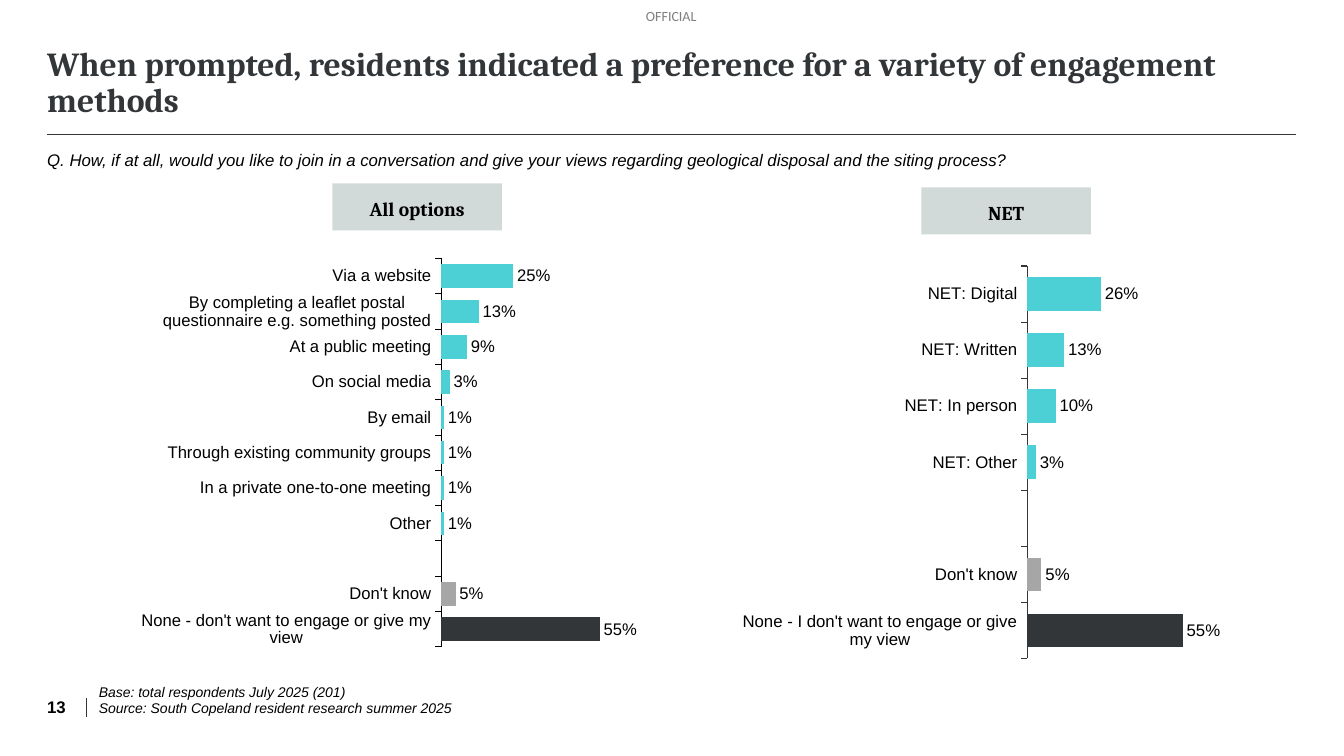
from lxml import etree
from pptx import Presentation
from pptx.chart.data import CategoryChartData
from pptx.dml.color import RGBColor
from pptx.enum.chart import XL_CHART_TYPE, XL_LABEL_POSITION, XL_TICK_MARK
from pptx.enum.shapes import MSO_CONNECTOR, MSO_SHAPE
from pptx.enum.text import MSO_ANCHOR, MSO_AUTO_SIZE, PP_ALIGN
from pptx.oxml.ns import qn
from pptx.util import Cm, Pt

TITLE = ("When prompted, residents indicated a preference for a variety "
         "of engagement methods")
QUESTION = ("Q. How, if at all, would you like to join in a conversation and give "
            "your views regarding geological disposal and the siting process?")
MARKING = "OFFICIAL"
PAGE = "13"
FOOTNOTE = ("Base: total respondents July 2025 (201)\n"
            "Source: South Copeland resident research summer 2025")

BLACK, DARK, TEAL, GREY, PALE = "000000", "323638", "4DCFD6", "A6A6A6", "D1D9D9"

ALL_OPTIONS = [
    ("Via a website", 0.25),
    ("By completing a leaflet postal questionnaire e.g. something posted", 0.13),
    ("At a public meeting", 0.09),
    ("On social media", 0.03),
    ("By email", 0.01),
    ("Through existing community groups", 0.01),
    ("In a private one-to-one meeting", 0.01),
    ("Other", 0.01),
    ("", None),
    ("Don't know", 0.05),
    ("None - don't want to engage or give my view", 0.55),
]
NET = [
    ("NET: Digital", 0.26),
    ("NET: Written", 0.13),
    ("NET: In person", 0.10),
    ("NET: Other", 0.03),
    ("", None),
    ("Don't know", 0.05),
    ("None - I don't want to engage or give my view", 0.55),
]
# heading, heading box, rows, chart box (cm), gap width, axis colour, plot area (x, y, w, h)
PANELS = [
    ("All options", (8.38, 4.62, 4.27, 1.19), ALL_OPTIONS,
     (3.56, 6.32, 14.83, 10.24), 50, BLACK, (0.512, 0.019, 0.495, 0.956)),
    ("NET", (23.22, 4.72, 4.27, 1.19), NET,
     (18.39, 6.32, 14.83, 10.67), 67, DARK, (0.506, 0.036, 0.48, 0.927)),
]
# start x, start y, end x, end y (cm), width (pt)
RULES = [(1.19, 3.4, 32.66, 3.4, 0.75), (2.18, 17.6, 2.18, 18.08, 0.5)]


def rgb(value):
    return RGBColor.from_string(value)


def lengths(values):
    return [Cm(v) for v in values]


def style(font, size, color=BLACK, name="Arial", bold=False, italic=False):
    font.size, font.name = Pt(size), name
    font.bold, font.italic = bold, italic
    font.color.rgb = rgb(color)


def fill_text(tf, text, size, anchor=MSO_ANCHOR.TOP, spacing=None, align=None,
              wrap=True, **look):
    tf.margin_left = tf.margin_right = tf.margin_top = tf.margin_bottom = 0
    tf.auto_size = MSO_AUTO_SIZE.NONE
    tf.word_wrap, tf.vertical_anchor = wrap, anchor
    tf.text = text
    for p in tf.paragraphs:
        p.alignment = align
        p.line_spacing = spacing
        for r in p.runs:
            style(r.font, size, **look)


def add_text(s, box, text, size, **look):
    tb = s.shapes.add_textbox(*lengths(box))
    fill_text(tb.text_frame, text, size, **look)


def add_rule(s, x1, y1, x2, y2, width):
    line = s.shapes.add_connector(MSO_CONNECTOR.STRAIGHT, *lengths((x1, y1, x2, y2)))
    line.line.color.rgb = rgb(DARK)
    line.line.width = Pt(width)
    etree.SubElement(line._element.spPr, qn("a:effectLst"))


def add_heading(s, box, text):
    sp = s.shapes.add_shape(MSO_SHAPE.RECTANGLE, *lengths(box))
    sp.shadow.inherit = False
    sp.fill.solid()
    sp.fill.fore_color.rgb = rgb(PALE)
    sp.line.fill.background()
    fill_text(sp.text_frame, text, 14, anchor=MSO_ANCHOR.MIDDLE, spacing=1.12,
              align=PP_ALIGN.CENTER, name="Cambria", bold=True)


def place_plot(chart, fractions):
    """Fix the inner plot area as fractions of the chart frame."""
    area = chart._chartSpace.chart.plotArea
    for old in area.findall(qn("c:layout")):
        area.remove(old)
    layout = etree.Element(qn("c:layout"))
    area.insert(0, layout)
    manual = etree.SubElement(layout, qn("c:manualLayout"))
    settings = [("layoutTarget", "inner"), ("xMode", "edge"), ("yMode", "edge")]
    for tag, value in settings + list(zip("xywh", fractions)):
        etree.SubElement(manual, qn("c:" + tag)).set("val", str(value))


def add_bars(s, box, rows, gap, axis_color, plot_area):
    data = CategoryChartData(number_format="0%")
    data.categories = [label for label, _ in rows]
    data.add_series("Series 1", [value for _, value in rows])
    chart = s.shapes.add_chart(XL_CHART_TYPE.BAR_CLUSTERED, *lengths(box), data).chart
    chart.has_legend = chart.has_title = False
    style(chart.font, 10)

    cat = chart.category_axis
    cat.reverse_order = True
    cat.major_tick_mark = XL_TICK_MARK.OUTSIDE
    cat.format.line.color.rgb = rgb(axis_color)
    cat.format.line.width = Pt(0.75)
    style(cat.tick_labels.font, 12)

    val = chart.value_axis
    val.minimum_scale, val.maximum_scale = 0, 1
    val.has_major_gridlines = False
    val.visible = False

    plot = chart.plots[0]
    plot.gap_width = gap
    plot.vary_by_categories = False
    series = plot.series[0]
    series.invert_if_negative = False
    last = len(rows) - 1
    fills = [(series, TEAL), (series.points[last - 1], GREY), (series.points[last], DARK)]
    for part, color in fills:
        part.format.fill.solid()
        part.format.fill.fore_color.rgb = rgb(color)

    labels = series.data_labels
    labels.show_value = True
    labels.position = XL_LABEL_POSITION.OUTSIDE_END
    labels.number_format, labels.number_format_is_linked = "0%", False
    style(labels.font, 12)
    place_plot(chart, plot_area)


def main():
    prs = Presentation()
    prs.slide_width, prs.slide_height = Cm(33.87), Cm(19.05)
    s = prs.slides.add_slide(prs.slide_layouts[5])

    title = s.shapes.title
    title.left, title.top, title.width, title.height = lengths((1.19, 1.65, 31.8, 1.37))
    fill_text(title.text_frame, TITLE, 24, anchor=MSO_ANCHOR.BOTTOM, spacing=0.9,
              align=PP_ALIGN.LEFT, name="Cambria", color=DARK, bold=True)

    for rule in RULES:
        add_rule(s, *rule)
    add_text(s, (16.28, 0.18, 1.35, 0.43), MARKING, 10, wrap=False,
             name="Calibri", color="7F7F7F")
    add_text(s, (1.19, 3.71, 30.53, 0.91), QUESTION, 12, spacing=1.13, italic=True)

    for heading, heading_box, rows, box, gap, axis_color, plot_area in PANELS:
        add_bars(s, box, rows, gap, axis_color, plot_area)
        add_heading(s, heading_box, heading)

    add_text(s, (1.19, 17.15, 0.79, 0.91), PAGE, 12, anchor=MSO_ANCHOR.BOTTOM, bold=True)
    add_text(s, (2.49, 17.15, 20.14, 0.91), FOOTNOTE, 10,
             anchor=MSO_ANCHOR.BOTTOM, italic=True)
    prs.save("out.pptx")


if __name__ == "__main__":
    main()
